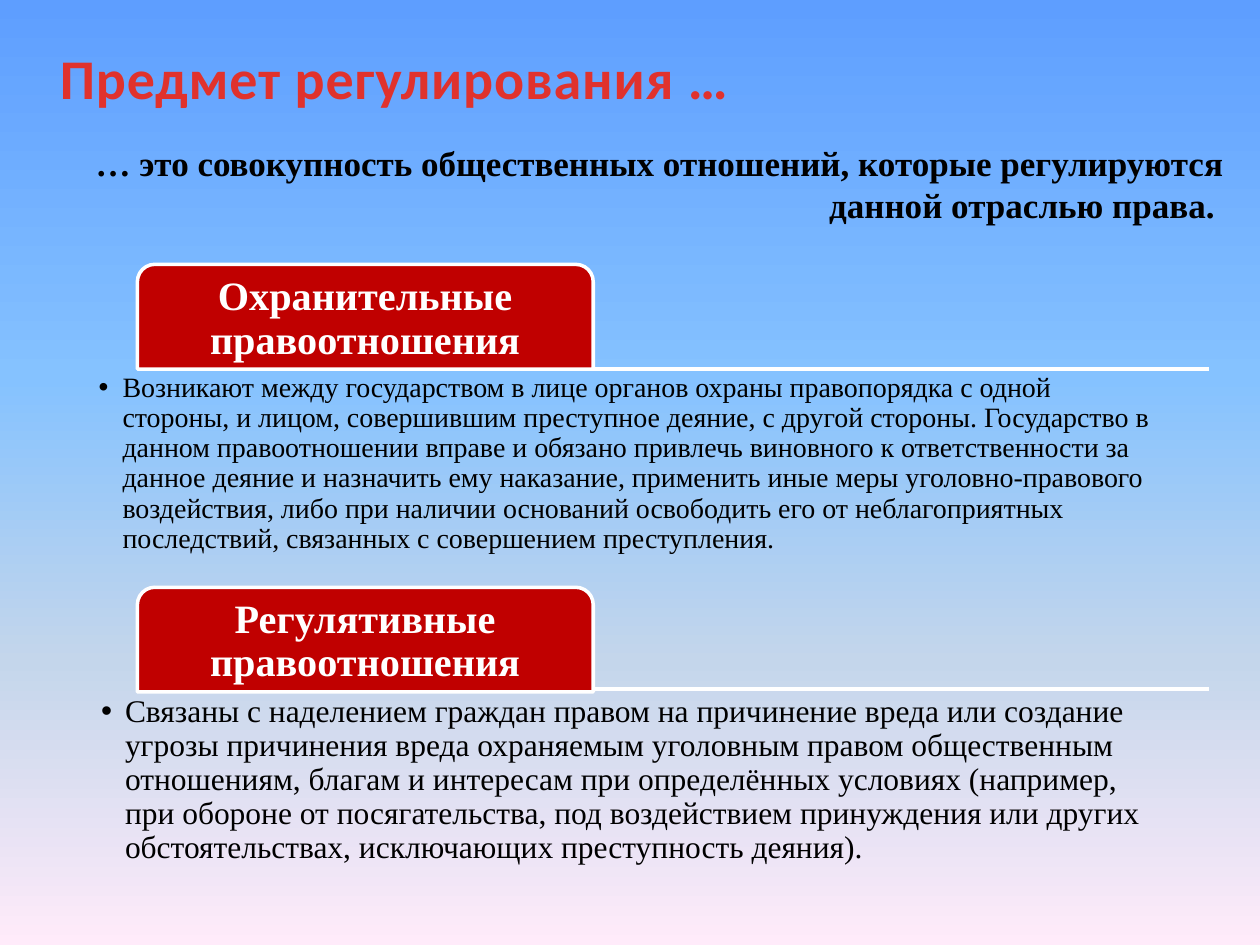
import copy

import lxml.etree
import pptx
import pptx.dml.color
import pptx.enum.shapes
import pptx.enum.text
import pptx.oxml.ns
import pptx.util

Cm = pptx.util.Cm
Pt = pptx.util.Pt
RGBColor = pptx.dml.color.RGBColor
ALIGN = pptx.enum.text.PP_ALIGN
ANCHOR = pptx.enum.text.MSO_ANCHOR

WHITE = RGBColor(0xFF, 0xFF, 0xFF)
BLACK = RGBColor(0x00, 0x00, 0x00)
TAB_RED = RGBColor(0xC0, 0x00, 0x00)
SKY = [
    (0, RGBColor(0x5E, 0x9E, 0xFF)),
    (0.4, RGBColor(0x85, 0xC2, 0xFF)),
    (0.7, RGBColor(0xC4, 0xD6, 0xEB)),
    (1, RGBColor(0xFF, 0xEB, 0xFA)),
]
TITLE_REDS = [
    (0.25, RGBColor(0xE0, 0x32, 0x2D)),
    (1, RGBColor(0xA2, 0x20, 0x1C)),
]
SERIF = "Times New Roman"

TITLE = "Предмет регулирования …"
DEFINITION = (
    "… это совокупность общественных отношений, которые регулируются "
    "данной отраслью права. "
)
SECTIONS = [
    {
        "heading": "Охранительные правоотношения",
        "text": "Возникают между государством в лице органов охраны правопорядка с одной "
        "стороны, и лицом, совершившим преступное деяние, с другой стороны. Государство в "
        "данном правоотношении вправе и обязано привлечь виновного к ответственности за "
        "данное деяние и назначить ему наказание, применить иные меры уголовно-правового "
        "воздействия, либо при наличии оснований освободить его от неблагоприятных "
        "последствий, связанных с совершением преступления.",
        "size": 16, "inset": 0.08, "tab_top": 5.33, "line_top": 7.44,
    },
    {
        "heading": "Регулятивные правоотношения",
        "text": "Связаны с наделением граждан правом на причинение вреда или создание "
        "угрозы причинения вреда охраняемым уголовным правом общественным "
        "отношениям, благам и интересам при определённых условиях (например, "
        "при обороне от посягательства, под воздействием принуждения или других "
        "обстоятельствах, исключающих преступность деяния).",
        "size": 18, "inset": 0.13, "tab_top": 11.84, "line_top": 13.89,
    },
]
TAB_LEFT, TAB_WIDTH, TAB_HEIGHT = 2.77, 9.19, 2.11
LINE_LEFT, LINE_RIGHT = 2.79, 24.38
BODY_LEFT, BODY_WIDTH, BODY_HEIGHT = 1.91, 21.59, 4.24


def apply(target, values):
    for name, value in values.items():
        setattr(target, name, value)


def place(shape, left, top, width, height):
    apply(shape, {"left": Cm(left), "top": Cm(top), "width": Cm(width), "height": Cm(height)})


def write(shape, text, frame_format, paragraph_format, font_format, color=None):
    frame = shape.text_frame
    apply(frame, {"word_wrap": True, "auto_size": pptx.enum.text.MSO_AUTO_SIZE.NONE})
    apply(frame, frame_format)
    paragraph = frame.paragraphs[0]
    apply(paragraph, paragraph_format)
    run = paragraph.add_run()
    run.text = text
    apply(run.font, font_format)
    if color is not None:
        run.font.color.rgb = color
    return run


def insets(size):
    return {f"margin_{side}": Cm(size) for side in ("left", "top", "right", "bottom")}


def paint_gradient(fill, element, stops):
    fill.gradient()
    fill.gradient_angle = 270
    stop_list = element.find(".//" + pptx.oxml.ns.qn("a:gsLst"))
    for _ in stops[2:]:
        stop_list.append(copy.deepcopy(stop_list[0]))
    for stop, (position, color) in zip(fill.gradient_stops, stops):
        stop.position = position
        stop.color.rgb = color


def add_rule(slide, top):
    line = slide.shapes.add_connector(
        pptx.enum.shapes.MSO_CONNECTOR.STRAIGHT,
        Cm(LINE_LEFT), Cm(top), Cm(LINE_RIGHT), Cm(top),
    )
    line.line.color.rgb = WHITE
    line.line.width = Pt(2)
    lxml.etree.SubElement(line.element.spPr, pptx.oxml.ns.qn("a:effectLst"))


def add_tab(slide, section):
    tab = slide.shapes.add_shape(
        pptx.enum.shapes.MSO_SHAPE.ROUND_2_SAME_RECTANGLE,
        Cm(TAB_LEFT), Cm(section["tab_top"]), Cm(TAB_WIDTH), Cm(TAB_HEIGHT),
    )
    tab.shadow.inherit = False
    tab.fill.solid()
    tab.fill.fore_color.rgb = TAB_RED
    tab.line.color.rgb = WHITE
    tab.line.width = Pt(2)
    write(
        tab, section["heading"],
        {"vertical_anchor": ANCHOR.MIDDLE, **insets(0.13)},
        {"alignment": ALIGN.CENTER, "line_spacing": 0.9},
        {"name": SERIF, "size": Pt(23), "bold": True}, WHITE,
    )


def fill_body(body, section):
    place(body, BODY_LEFT, section["line_top"], BODY_WIDTH, BODY_HEIGHT)
    write(
        body, section["text"],
        {"vertical_anchor": ANCHOR.TOP, **insets(section["inset"])},
        {"line_spacing": 0.9, "space_before": Pt(0)},
        {"name": SERIF, "size": Pt(section["size"])}, BLACK,
    )
    properties = body.text_frame.paragraphs[0]._p.get_or_add_pPr()
    properties.set("marL", str(int(Cm(0.48))))
    properties.set("indent", str(int(Cm(-0.48))))


def main():
    presentation = pptx.Presentation()
    presentation.slide_width = Cm(25.4)
    presentation.slide_height = Cm(19.05)
    slide = presentation.slides.add_slide(presentation.slide_layouts[3])
    paint_gradient(slide.background.fill, slide.element, SKY)

    title, *bodies = slide.placeholders
    place(title, 0.51, 0.74, 14.88, 1.63)
    title_run = write(
        title, TITLE, {"vertical_anchor": ANCHOR.TOP}, {"alignment": ALIGN.CENTER},
        {"name": "Calibri", "size": Pt(32), "bold": True},
    )
    paint_gradient(title_run.font.fill, title_run._r, TITLE_REDS)
    title_run._r.get_or_add_rPr().set("spc", "50")

    definition = slide.shapes.add_textbox(Cm(1.32), Cm(2.72), Cm(23.6), Cm(1.96))
    write(
        definition, DEFINITION, {}, {"alignment": ALIGN.RIGHT},
        {"name": SERIF, "size": Pt(20), "bold": True}, BLACK,
    )

    for section, body in zip(SECTIONS, bodies):
        add_rule(slide, section["line_top"])
        add_tab(slide, section)
        fill_body(body, section)

    presentation.save("out.pptx")


if __name__ == "__main__":
    main()
